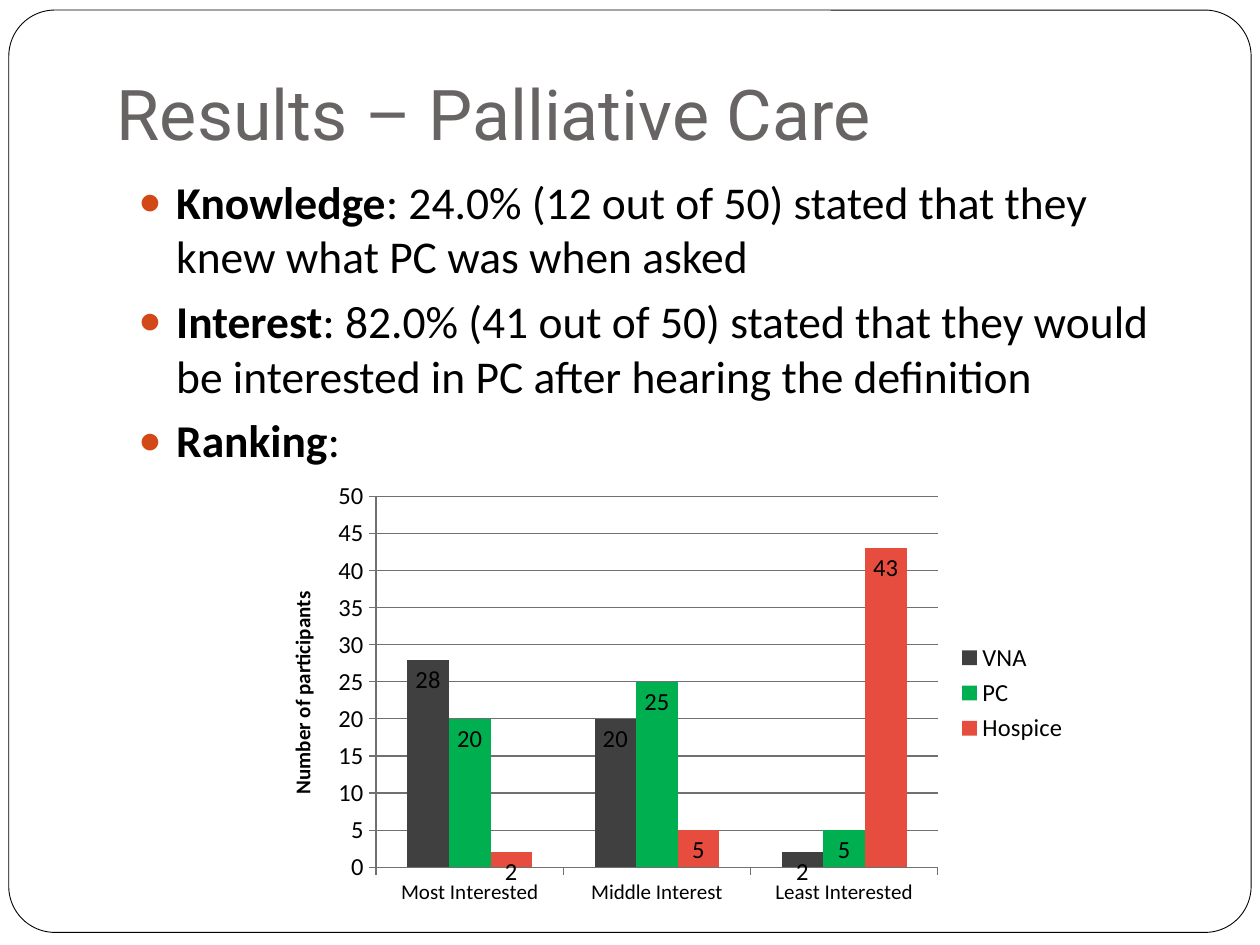
from pptx import Presentation
from pptx.chart.data import CategoryChartData
from pptx.dml.color import RGBColor
from pptx.enum import chart as ch, shapes, text
from pptx.oxml import parse_xml
from pptx.oxml.ns import nsdecls
from pptx.util import Inches, Pt

BLACK = RGBColor(0, 0, 0)
WHITE = RGBColor(255, 255, 255)
TITLE_GRAY = RGBColor(0x69, 0x64, 0x64)
GRID_GRAY = RGBColor(0x70, 0x70, 0x70)
BULLET = "D34817"

TITLE = "Results – Palliative Care"
BULLETS = [
    ("Knowledge", ": 24.0% (12 out of 50) stated that they knew what PC was when asked"),
    ("Interest", ": 82.0% (41 out of 50) stated that they would be interested in PC "
                 "after hearing the definition"),
    ("Ranking", ":"),
]
CATEGORIES = ["Most Interested", "Middle Interest", "Least Interested"]
SERIES = [
    ("VNA", (28, 20, 2), RGBColor(0x40, 0x40, 0x40)),
    ("PC", (20, 25, 5), RGBColor(0x00, 0xB0, 0x50)),
    ("Hospice", (2, 5, 43), RGBColor(0xE6, 0x4D, 0x3E)),
]


def box(*lengths):
    return [Inches(n) for n in lengths]


def set_font(font, size, name="Calibri", color=BLACK, bold=None):
    font.size, font.name, font.bold = Pt(size), name, bold
    font.color.rgb = color


def add_bullet(p):
    pPr = p._p.get_or_add_pPr()
    pPr.set("marL", str(Inches(0.3)))
    pPr.set("indent", str(-Inches(0.3)))
    for xml in (f'<a:buClr {nsdecls("a")}><a:srgbClr val="{BULLET}"/></a:buClr>',
                f'<a:buSzPct {nsdecls("a")} val="85000"/>',
                f'<a:buFont {nsdecls("a")} typeface="Arial"/>',
                f'<a:buChar {nsdecls("a")} char="●"/>'):
        pPr.insert_element_before(parse_xml(xml), "a:tabLst", "a:defRPr", "a:extLst")


prs = Presentation()
prs.slide_width, prs.slide_height = box(10, 7.5)
s = prs.slides.add_slide(prs.slide_layouts[6])

# Rounded frame
frame = s.shapes.add_shape(shapes.MSO_SHAPE.ROUNDED_RECTANGLE, *box(0.07, 0.08, 9.86, 7.32))
frame.adjustments[0] = 0.05
frame.shadow.inherit = False
frame.fill.solid()
frame.fill.fore_color.rgb = WHITE
frame.line.color.rgb = BLACK
frame.line.width = Pt(0.5)

# Title
tf = s.shapes.add_textbox(*box(0.83, 0.08, 8.5, 1.25)).text_frame
tf.word_wrap = True
tf.vertical_anchor = text.MSO_ANCHOR.BOTTOM
tf.margin_bottom = Inches(0.1)
tf.text = TITLE
set_font(tf.paragraphs[0].font, 40, "Roboto", TITLE_GRAY)

# Bullets
tf = s.shapes.add_textbox(*box(1, 1.33, 8.5, 3.17)).text_frame
tf.word_wrap = True
for i, (lead, rest) in enumerate(BULLETS):
    p = tf.add_paragraph() if i else tf.paragraphs[0]
    p.space_before = Pt(5.8)
    add_bullet(p)
    set_font(p.font, 26)
    for words, bold in ((lead, True), (rest, False)):
        r = p.add_run()
        r.text = words
        r.font.bold = bold

# Ranking chart
data = CategoryChartData()
data.categories = CATEGORIES
for name, values, _ in SERIES:
    data.add_series(name, values)
chart = s.shapes.add_chart(ch.XL_CHART_TYPE.COLUMN_CLUSTERED,
                           *box(2.08, 3.75, 6.5, 3.5), data).chart
set_font(chart.font, 18, "Times New Roman")
chart.has_title = False
chart.has_legend = True
chart.legend.position = ch.XL_LEGEND_POSITION.RIGHT
chart.legend.include_in_layout = False
set_font(chart.legend.font, 14)

plot = chart.plots[0]
plot.gap_width = 150
plot.overlap = 0
plot.vary_by_categories = False
for series, (_, _, color) in zip(plot.series, SERIES):
    series.format.fill.solid()
    series.format.fill.fore_color.rgb = color
    labels = series.data_labels
    labels.show_value = True
    labels.position = ch.XL_LABEL_POSITION.INSIDE_END
    set_font(labels.font, 14)

# Axes
val_axis = chart.value_axis
val_axis.minimum_scale, val_axis.maximum_scale, val_axis.major_unit = 0, 50, 5
val_axis.has_major_gridlines = True
for axis, size in ((chart.category_axis, 12), (val_axis, 14)):
    axis.major_tick_mark = ch.XL_TICK_MARK.OUTSIDE
    axis.format.line.color.rgb = GRID_GRAY
    set_font(axis.tick_labels.font, size)
val_axis.major_gridlines.format.line.color.rgb = GRID_GRAY
title_tf = val_axis.axis_title.text_frame
title_tf.text = "Number of participants"
set_font(title_tf.paragraphs[0].font, 12, bold=True)

prs.save("out.pptx")
